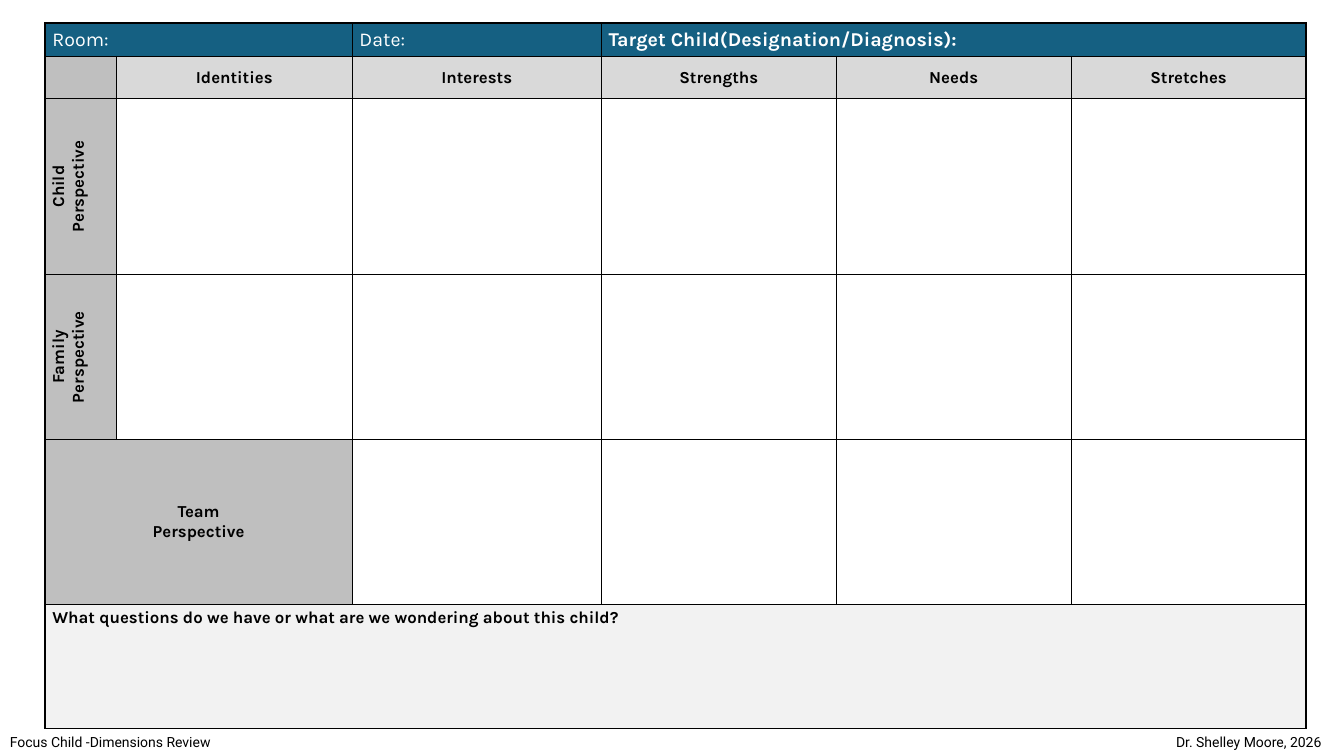
from dataclasses import dataclass

import lxml.etree
import pptx
import pptx.dml.color
import pptx.enum.text
import pptx.oxml.ns
import pptx.util

Pt = pptx.util.Pt
qn = pptx.oxml.ns.qn
ALIGN = pptx.enum.text.PP_ALIGN
ANCHOR = pptx.enum.text.MSO_ANCHOR


@dataclass(frozen=True)
class Theme:
    banner: str = "156082"
    side: str = "BFBFBF"
    heading: str = "D9D9D9"
    questions: str = "F2F2F2"
    blank: str = "FFFFFF"
    ink: str = "000000"
    table_font: str = "Karla"
    footer_font: str = "Roboto"
    banner_size: float = 14
    table_size: float = 12
    footer_size: float = 10
    border: float = 1


THEME = Theme()
SLIDE_W, SLIDE_H = 960, 540
COLUMNS = [51, 168.4, 178, 167.8, 167.8, 167.8]
ROWS = [24, 30, 125.7, 117.9, 117.9, 88.5]
DIMENSIONS = ["Identities", "Interests", "Strengths", "Needs", "Stretches"]


def rgb(color):
    return pptx.dml.color.RGBColor.from_string(color)


def add_run(paragraph, text, font, size, color, bold=False):
    run = paragraph.add_run()
    run.text = text
    run.font.name, run.font.size, run.font.bold = font, Pt(size), bold
    run.font.color.rgb = rgb(color)


def draw_borders(cell):
    properties = cell._tc.get_or_add_tcPr()
    for side in ("a:lnL", "a:lnR", "a:lnT", "a:lnB"):
        line = lxml.etree.SubElement(properties, qn(side), w=str(Pt(THEME.border)))
        fill = lxml.etree.SubElement(line, qn("a:solidFill"))
        lxml.etree.SubElement(fill, qn("a:srgbClr"), val=THEME.ink)


def prepare_cell(cell):
    """Give an empty cell its borders, margins and white ground."""
    draw_borders(cell)
    cell.fill.solid()
    cell.fill.fore_color.rgb = rgb(THEME.blank)
    cell.margin_left = cell.margin_right = Pt(5.2)
    cell.margin_top = cell.margin_bottom = Pt(2.6)
    lxml.etree.SubElement(cell.text_frame.paragraphs[0]._p, qn("a:endParaRPr"),
                          sz=str(THEME.table_size * 100))


def write_cell(cell, lines, ground, align=ALIGN.CENTER, anchor=ANCHOR.MIDDLE,
               size=THEME.table_size, color=THEME.ink, bold=True):
    cell.fill.fore_color.rgb = rgb(ground)
    cell.vertical_anchor = anchor
    for index, line in enumerate(lines):
        frame = cell.text_frame
        paragraph = frame.add_paragraph() if index else frame.paragraphs[0]
        paragraph.alignment = align
        add_run(paragraph, line, THEME.table_font, size, color, bold)


def add_review_grid(slide, left, top, width, height):
    frame = slide.shapes.add_table(len(ROWS), len(COLUMNS),
                                   Pt(left), Pt(top), Pt(width), Pt(height))
    grid = frame.table
    grid.first_row = grid.horz_banding = False
    for column, share in zip(grid.columns, COLUMNS):
        column.width = Pt(share * width / sum(COLUMNS))
    for row, share in zip(grid.rows, ROWS):
        row.height = Pt(share * height / sum(ROWS))
    for cell in grid.iter_cells():
        prepare_cell(cell)

    # Merged areas: room, target child, team, questions
    for row, first, last in [(0, 0, 1), (0, 3, 5), (4, 0, 1), (5, 0, 5)]:
        grid.cell(row, first).merge(grid.cell(row, last))

    # Banner
    for column, label, bold in [(0, "Room:", False), (2, "Date:", False),
                                (3, "Target Child(Designation/Diagnosis):", True)]:
        write_cell(grid.cell(0, column), [label], THEME.banner, ALIGN.LEFT,
                   size=THEME.banner_size, color=THEME.blank, bold=bold)

    # Column headings
    write_cell(grid.cell(1, 0), [], THEME.side)
    for column, dimension in enumerate(DIMENSIONS, 1):
        write_cell(grid.cell(1, column), [dimension], THEME.heading)

    # Perspectives down the side, the first two turned upwards
    for row, viewer in enumerate(["Child", "Family", "Team"], 2):
        perspective = grid.cell(row, 0)
        write_cell(perspective, [viewer, "Perspective"], THEME.side)
        if viewer != "Team":
            perspective._tc.get_or_add_tcPr().set("vert", "vert270")

    # Questions
    write_cell(grid.cell(5, 0),
               ["What questions do we have or what are we wondering about this child?"],
               THEME.questions, ALIGN.LEFT, ANCHOR.TOP)


def add_footer_note(slide, text, left, top, width, height):
    note = slide.shapes.add_textbox(Pt(left), Pt(top), Pt(width), Pt(height)).text_frame
    note.word_wrap = True
    add_run(note.paragraphs[0], text, THEME.footer_font, THEME.footer_size, THEME.ink)


def add_review_slide(deck):
    slide = deck.slides.add_slide(deck.slide_layouts[6])
    add_review_grid(slide, 32.2, 16.4, sum(COLUMNS), sum(ROWS))
    footer_top, footer_height = 520.6, 19.4
    add_footer_note(slide, "Focus Child -Dimensions Review",
                    0, footer_top, 236, footer_height)
    author_left = 833
    add_footer_note(slide, "Dr. Shelley Moore, 2026",
                    author_left, footer_top, SLIDE_W - author_left, footer_height)


def main():
    deck = pptx.Presentation()
    deck.slide_width, deck.slide_height = Pt(SLIDE_W), Pt(SLIDE_H)
    add_review_slide(deck)
    deck.save("out.pptx")


if __name__ == "__main__":
    main()
